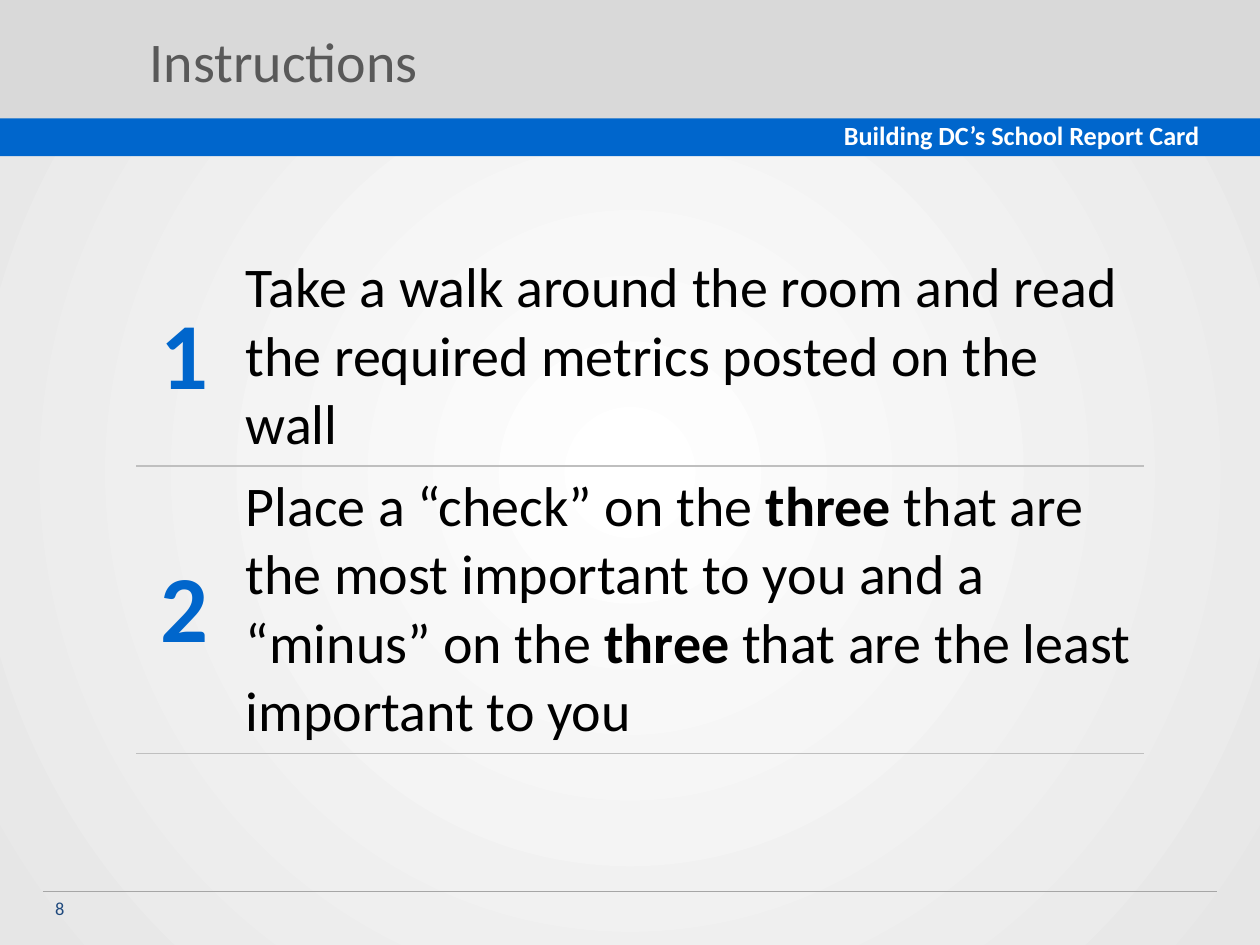
from dataclasses import dataclass

from lxml import etree
from pptx import Presentation
from pptx.dml.color import RGBColor
from pptx.enum.shapes import MSO_CONNECTOR, MSO_SHAPE
from pptx.enum.text import MSO_ANCHOR, PP_ALIGN
from pptx.oxml.ns import qn
from pptx.util import Inches, Pt

RECTANGLE = MSO_SHAPE.RECTANGLE
STRAIGHT = MSO_CONNECTOR.STRAIGHT
TOP, MIDDLE = MSO_ANCHOR.TOP, MSO_ANCHOR.MIDDLE
LEFT, CENTER = PP_ALIGN.LEFT, PP_ALIGN.CENTER


@dataclass(frozen=True)
class Theme:
    font: str = "Calibri"
    center: str = "FFFFFF"
    edge: str = "E6E6E6"
    header: str = "D9D9D9"
    accent: str = "0066CC"
    title: str = "595959"
    body: str = "000000"
    on_accent: str = "FFFFFF"
    page: str = "1F497D"
    footer_rule: str = "A6A6A6"
    row_rule: str = "BFBFBF"
    title_size: float = 32
    banner_size: float = 15
    number_size: float = 54
    body_size: float = 32
    page_size: float = 10.5


THEME = Theme()

STEPS = [
    [("Take a walk around the room and read the required metrics posted on the wall", False)],
    [
        ("Place a “check” on the ", False),
        ("three", True),
        (" that are the most important to you and a “minus” on the ", False),
        ("three", True),
        (" that are the least important to you", False),
    ],
]
ROW_HEIGHTS = [1.73, 2.28]
COLUMN_WIDTHS = [0.77, 7.23]


def rgb(color):
    return RGBColor.from_string(color)


def style(paragraph, size, color, bold=None, align=LEFT):
    paragraph.alignment = align
    font = paragraph.font
    font.name, font.size, font.bold = THEME.font, Pt(size), bold
    font.color.rgb = rgb(color)


def paint_background(slide):
    fill = slide.background.fill
    fill.gradient()
    for stop, color, position in zip(fill.gradient_stops, (THEME.center, THEME.edge), (0, 1)):
        stop.color.rgb = rgb(color)
        stop.position = position
    gradient = slide.element.find(".//" + qn("a:gradFill"))
    gradient.remove(gradient.find(qn("a:lin")))
    radial = etree.SubElement(gradient, qn("a:path"))
    radial.set("path", "circle")
    focus = etree.SubElement(radial, qn("a:fillToRect"))
    for side in "ltrb":
        focus.set(side, "50000")


def add_band(slide, top, height, color):
    band = slide.shapes.add_shape(RECTANGLE, 0, Inches(top), Inches(10), Inches(height))
    band.shadow.inherit = False
    band.fill.solid()
    band.fill.fore_color.rgb = rgb(color)
    band.line.fill.background()


def add_footer_rule(slide, left, right, y):
    rule = slide.shapes.add_connector(STRAIGHT, Inches(left), Inches(y), Inches(right), Inches(y))
    rule.line.color.rgb = rgb(THEME.footer_rule)
    rule.line.width = Pt(0.25)
    etree.SubElement(rule.element.spPr, qn("a:effectLst"))


def add_label(slide, text, left, top, width, height, size, color, bold=None, anchor=TOP):
    frame = slide.shapes.add_textbox(
        Inches(left), Inches(top), Inches(width), Inches(height)
    ).text_frame
    frame.word_wrap = True
    frame.vertical_anchor = anchor
    paragraph = frame.paragraphs[0]
    paragraph.text = text
    style(paragraph, size, color, bold)


def set_borders(cell, ruled_sides):
    properties = cell._tc.get_or_add_tcPr()
    for side in "LRTB":
        border = etree.SubElement(properties, qn("a:ln" + side))
        if side in ruled_sides:
            border.set("w", str(Pt(1)))
            fill = etree.SubElement(border, qn("a:solidFill"))
            etree.SubElement(fill, qn("a:srgbClr")).set("val", THEME.row_rule)
        else:
            etree.SubElement(border, qn("a:noFill"))


def add_steps(slide, left, top):
    table = slide.shapes.add_table(
        len(STEPS), len(COLUMN_WIDTHS), Inches(left), Inches(top),
        Inches(sum(COLUMN_WIDTHS)), Inches(sum(ROW_HEIGHTS)),
    ).table
    table.first_row = table.horz_banding = False
    for column, width in zip(table.columns, COLUMN_WIDTHS):
        column.width = Inches(width)
    for index, (row, height, step) in enumerate(zip(table.rows, ROW_HEIGHTS, STEPS)):
        row.height = Inches(height)
        number, instruction = row.cells
        for cell in row.cells:
            set_borders(cell, "TB" if index else "B")
            cell.fill.background()
            cell.vertical_anchor = MIDDLE
        number.text = str(index + 1)
        style(number.text_frame.paragraphs[0], THEME.number_size, THEME.accent, True, CENTER)
        paragraph = instruction.text_frame.paragraphs[0]
        style(paragraph, THEME.body_size, THEME.body)
        for text, bold in step:
            run = paragraph.add_run()
            run.text = text
            run.font.bold = bold


def main():
    deck = Presentation()
    deck.slide_width, deck.slide_height = Inches(10), Inches(7.5)
    slide = deck.slides.add_slide(deck.slide_layouts[6])
    paint_background(slide)
    add_band(slide, 0, 1.01, THEME.header)
    add_footer_rule(slide, 0.34, 9.66, 7.07)
    add_band(slide, 0.94, 0.3, THEME.accent)
    add_label(slide, "Building DC’s School Report Card", 6.6, 0.9, 3.4, 0.35,
              THEME.banner_size, THEME.on_accent, bold=True)
    add_label(slide, "Instructions", 1.09, 0.12, 8.65, 0.71,
              THEME.title_size, THEME.title, anchor=MIDDLE)
    add_steps(slide, 1.08, 1.97)
    add_label(slide, "8", 0.34, 7.07, 2.33, 0.4, THEME.page_size, THEME.page)
    deck.save("out.pptx")


if __name__ == "__main__":
    main()
